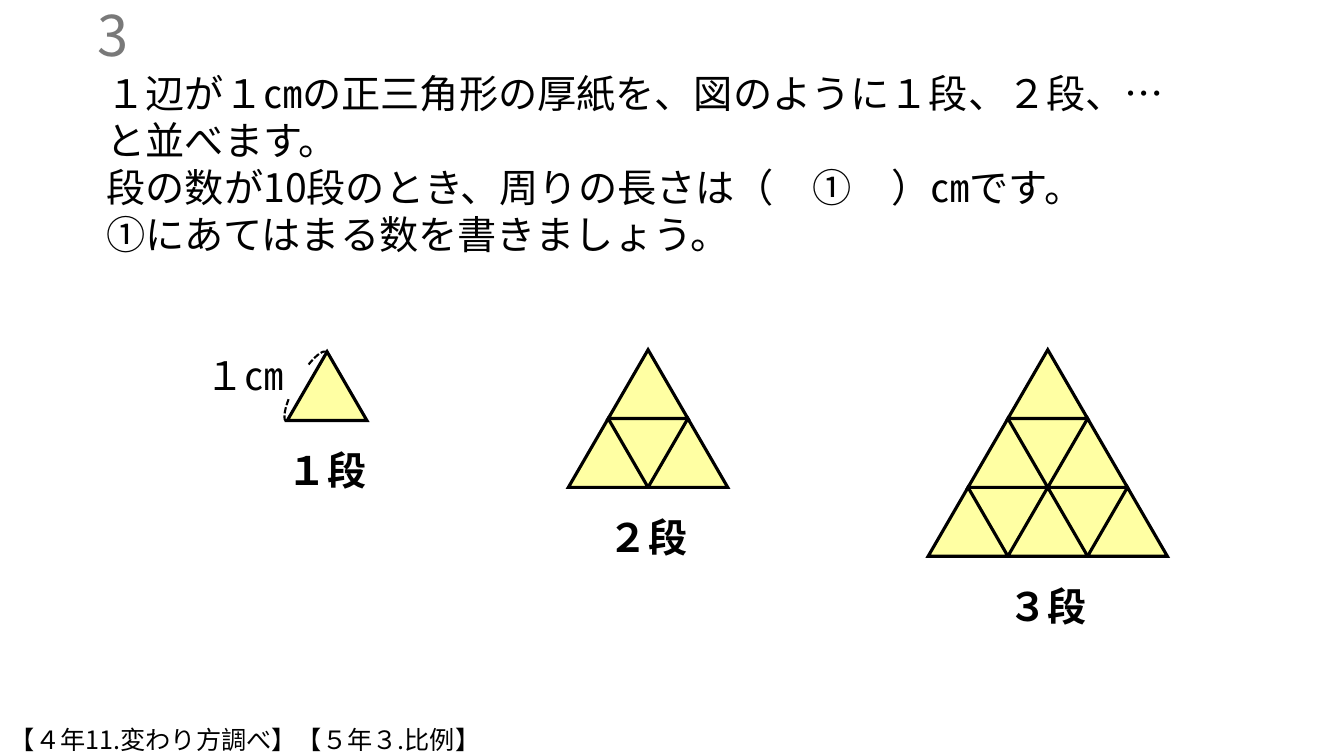
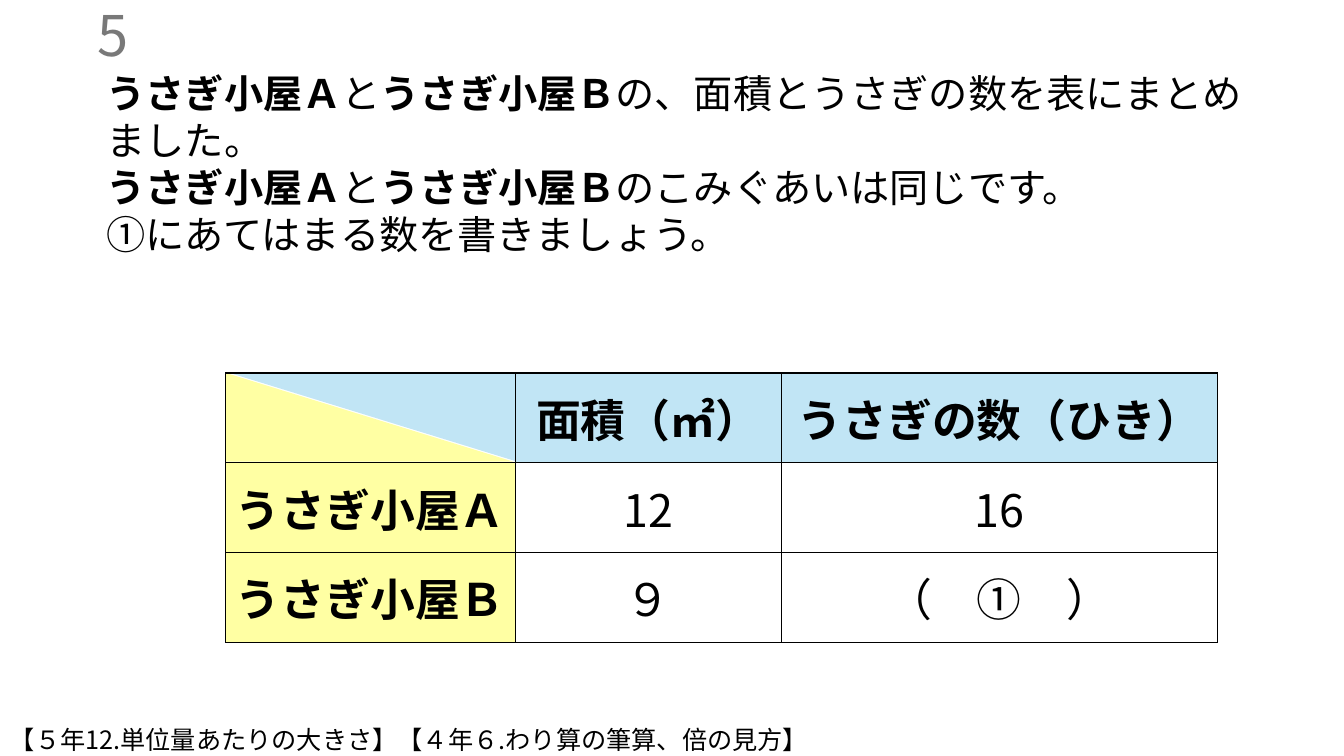
from dataclasses import dataclass

from lxml.etree import SubElement
from pptx import Presentation
from pptx.dml.color import RGBColor
from pptx.enum.dml import MSO_LINE
from pptx.enum.shapes import MSO_SHAPE
from pptx.enum.text import MSO_ANCHOR, PP_ALIGN
from pptx.oxml.ns import qn
from pptx.util import Inches, Pt

FONT = "Noto Sans CJK JP"
BLACK = RGBColor(0x00, 0x00, 0x00)
GRAY = RGBColor(0x79, 0x79, 0x79)
YELLOW = RGBColor(0xFF, 0xFF, 0xA3)
BLUE = RGBColor(0xC1, 0xE5, 0xF5)

SLIDE_W = Inches(13.33)
SLIDE_H = Inches(7.5)
SIDE = 5.93
TIER = 9.1
LABEL_W = 10.5
LABEL_GAP = 2.1
LINE_RATIO = 1.2


@dataclass(frozen=True)
class Area:
    x: float
    y: float
    w: float
    h: float

    def emu(self) -> tuple[int, int, int, int]:
        return across(self.x), down(self.y), across(self.w), down(self.h)


@dataclass(frozen=True)
class Span:
    text: str
    bold: bool = False


@dataclass(frozen=True)
class Question:
    number: str
    lines: list[list[Span]]
    width: float
    units: str
    units_width: float


@dataclass(frozen=True)
class Stack:
    label: str
    tiers: int
    apex: float
    top: float


@dataclass(frozen=True)
class Cell:
    text: str
    fill: RGBColor | None = None
    bold: bool = False


BODY = {"size": Pt(28)}
NUMBER = {"size": Pt(40)}
UNITS = {"size": Pt(18)}
TABLE = {"size": Pt(32)}

HUTCH_A = Span("うさぎ小屋Ａ", True)
HUTCH_B = Span("うさぎ小屋Ｂ", True)
AND = Span("と")
PROMPT = [Span("①にあてはまる数を書きましょう。")]

TRIANGLES = Question(
    "3",
    [
        [Span("１辺が１㎝の正三角形の厚紙を、図のように１段、２段、…と並べます。")],
        [Span("段の数が10段のとき、周りの長さは（\u3000①\u3000）㎝です。".replace("\u3000", "　"))],
        PROMPT,
    ],
    81.68,
    "【４年11.変わり方調べ】【５年３.比例】",
    56.18,
)
RABBITS = Question(
    "5",
    [
        [HUTCH_A, AND, HUTCH_B, Span("の、面積とうさぎの数を表にまとめました。")],
        [HUTCH_A, AND, HUTCH_B, Span("のこみぐあいは同じです。")],
        PROMPT,
    ],
    86.48,
    "【５年12.単位量あたりの大きさ】【４年６.わり算の筆算、倍の見方】",
    68.25,
)
STACKS = [
    Stack("１段", 1, 24.34, 46.53),
    Stack("２段", 2, 48.22, 46.27),
    Stack("３段", 3, 77.96, 46.27),
]
HUTCH_COLUMNS = [21.53, 19.8, 32.48]
HUTCH_ROW = 11.87
HUTCHES = [
    [Cell(""), Cell("面積（㎡）", BLUE, True), Cell("うさぎの数（ひき）", BLUE, True)],
    [Cell("うさぎ小屋Ａ", YELLOW, True), Cell("12"), Cell("16")],
    [Cell("うさぎ小屋Ｂ", YELLOW, True), Cell("９"), Cell("（　①　）")],
]


def across(percent: float) -> int:
    return round(SLIDE_W * percent / 100)


def down(percent: float) -> int:
    return round(SLIDE_H * percent / 100)


def write_span(paragraph, span: Span, style: dict, color: RGBColor = BLACK) -> None:
    run = paragraph.add_run()
    run.text = span.text
    for key, value in {**style, "name": FONT, "bold": span.bold}.items():
        setattr(run.font, key, value)
    run.font.color.rgb = color
    SubElement(run.font._element, qn("a:ea")).set("typeface", FONT)


def add_text(slide, area: Area, lines: list[list[Span]], style: dict,
             color: RGBColor = BLACK, align: PP_ALIGN = PP_ALIGN.LEFT,
             anchor: MSO_ANCHOR = MSO_ANCHOR.TOP) -> None:
    frame = slide.shapes.add_textbox(*area.emu()).text_frame
    points = style["size"].pt
    settings = {
        "word_wrap": True,
        "vertical_anchor": anchor,
        "margin_top": Inches(0.05 + points * 0.0018),
    }
    for key, value in settings.items():
        setattr(frame, key, value)
    for index, spans in enumerate(lines):
        paragraph = frame.add_paragraph() if index else frame.paragraphs[0]
        paragraph.alignment = align
        paragraph.line_spacing = Pt(points * LINE_RATIO)
        for span in spans:
            write_span(paragraph, span, style, color)


def add_triangle(slide, preset: MSO_SHAPE, area: Area, fill: RGBColor,
                 rotation: float = 0, outlined: bool = False) -> None:
    triangle = slide.shapes.add_shape(preset, *area.emu())
    triangle.shadow.inherit = False
    triangle.rotation = rotation
    triangle.fill.solid()
    triangle.fill.fore_color.rgb = fill
    if outlined:
        triangle.line.color.rgb = BLACK
        triangle.line.width = Pt(2.25)
        miter = SubElement(triangle.line._get_or_add_ln(), qn("a:miter"))
        miter.set("lim", "800000")
    else:
        triangle.line.fill.background()


def add_stack(slide, stack: Stack) -> None:
    for upright in (False, True):
        for tier in range(stack.tiers):
            count = tier + 1 if upright else tier
            left = stack.apex - SIDE * count / 2
            for place in range(count):
                area = Area(left + SIDE * place, stack.top + TIER * tier, SIDE, TIER)
                add_triangle(slide, MSO_SHAPE.ISOSCELES_TRIANGLE, area, YELLOW,
                             0 if upright else 180, upright)
    label_top = stack.top + TIER * stack.tiers + LABEL_GAP
    add_text(slide, Area(stack.apex - LABEL_W / 2, label_top, LABEL_W, 7.6),
             [[Span(stack.label, True)]], BODY, align=PP_ALIGN.CENTER)


def add_side_mark(slide) -> None:
    for start, flipped in ((201.04, False), (200.22, True)):
        arc = slide.shapes.add_shape(MSO_SHAPE.ARC, *Area(19.8, 49.73, 6.05, 2.93).emu())
        arc.shadow.inherit = False
        arc.adjustments[0] = start
        arc.adjustments[1] = 0
        arc.rotation = 299.7
        if flipped:
            arc._element.spPr.find(qn("a:xfrm")).set("flipH", "1")
        arc.fill.background()
        arc.line.color.rgb = BLACK
        arc.line.width = Pt(1.5)
        arc.line.dash_style = MSO_LINE.SQUARE_DOT
    add_text(slide, Area(14.55, 45.2, 10.28, 7.6), [[Span("１㎝")]], BODY)


def add_borders(cell) -> None:
    properties = cell._tc.get_or_add_tcPr()
    for position, edge in enumerate(("lnL", "lnR", "lnT", "lnB")):
        line = properties.makeelement(qn(f"a:{edge}"), {"w": str(Pt(1))})
        color = SubElement(SubElement(line, qn("a:solidFill")), qn("a:srgbClr"))
        color.set("val", str(BLACK))
        properties.insert(position, line)


def add_hutch_table(slide) -> None:
    for left, fill, rotation in ((16.8, YELLOW, 0), (17.1, BLUE, 180)):
        add_triangle(slide, MSO_SHAPE.RIGHT_TRIANGLE,
                     Area(left, 49.33, 21.38, 11.73), fill, rotation)
    area = Area(16.8, 49.33, sum(HUTCH_COLUMNS), HUTCH_ROW * len(HUTCHES))
    table = slide.shapes.add_table(len(HUTCHES), len(HUTCH_COLUMNS), *area.emu()).table
    table.first_row = False
    table.horz_banding = False
    for column, width in zip(table.columns, HUTCH_COLUMNS):
        column.width = across(width)
    for row, entries in zip(table.rows, HUTCHES):
        row.height = down(HUTCH_ROW)
        for cell, entry in zip(row.cells, entries):
            cell.vertical_anchor = MSO_ANCHOR.MIDDLE
            cell.margin_left = cell.margin_right = Inches(0.05)
            if entry.fill is None:
                cell.fill.background()
            else:
                cell.fill.solid()
                cell.fill.fore_color.rgb = entry.fill
            add_borders(cell)
            if entry.text:
                paragraph = cell.text_frame.paragraphs[0]
                paragraph.alignment = PP_ALIGN.CENTER
                write_span(paragraph, Span(entry.text, entry.bold), TABLE)


def add_question(deck, question: Question):
    slide = deck.slides.add_slide(deck.slide_layouts[6])
    add_text(slide, Area(7.2, 7.87, question.width, 26.53), question.lines, BODY)
    add_text(slide, Area(2.78, 1.33, 7.5, 5.33), [[Span(question.number)]], NUMBER,
             GRAY, PP_ALIGN.RIGHT, MSO_ANCHOR.MIDDLE)
    add_text(slide, Area(0, 94.67, question.units_width, 5.33),
             [[Span(question.units)]], UNITS)
    return slide


def main() -> None:
    deck = Presentation()
    deck.slide_width = SLIDE_W
    deck.slide_height = SLIDE_H
    triangles = add_question(deck, TRIANGLES)
    add_side_mark(triangles)
    for stack in STACKS:
        add_stack(triangles, stack)
    add_hutch_table(add_question(deck, RABBITS))
    deck.save("out.pptx")


if __name__ == "__main__":
    main()
